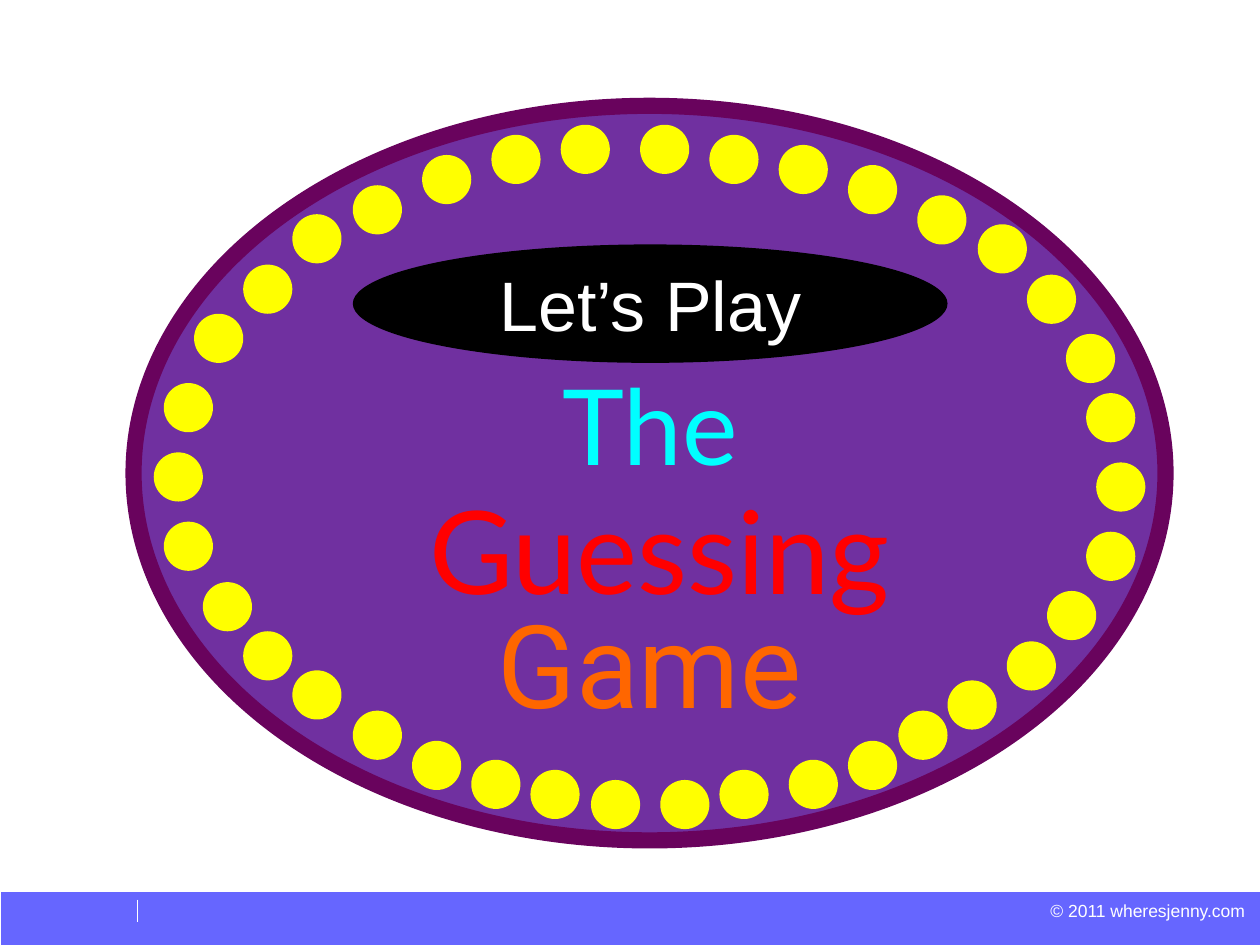
from typing import NamedTuple

from pptx import Presentation
from pptx.dml.color import RGBColor
from pptx.enum.shapes import MSO_CONNECTOR, MSO_SHAPE
from pptx.enum.text import MSO_ANCHOR, MSO_AUTO_SIZE, PP_ALIGN
from pptx.oxml.ns import qn
from pptx.util import Emu, Pt
from lxml import etree

EMU_PER_PX = 9144  # 100 px to the inch
OVAL, RECT = MSO_SHAPE.OVAL, MSO_SHAPE.RECTANGLE
STRAIGHT = MSO_CONNECTOR.STRAIGHT
MIDDLE, TOP = MSO_ANCHOR.MIDDLE, MSO_ANCHOR.TOP
CENTER, RIGHT = PP_ALIGN.CENTER, PP_ALIGN.RIGHT
NO_AUTOFIT = MSO_AUTO_SIZE.NONE

WHITE = "FFFFFF"
BULB_SIZE = 39
BLANK_LAYOUT = 6


class Box(NamedTuple):
    left: int
    top: int
    width: int
    height: int


class Title(NamedTuple):
    words: str
    box: Box
    size: int
    font: str
    color: str
    wrap: bool


# Left and top of each bulb, clockwise from the top centre
BULBS = [
    (508, 99), (563, 107), (618, 115), (673, 131), (728, 155), (776, 178),
    (815, 218), (846, 265), (862, 312), (870, 367), (862, 422), (831, 469),
    (799, 509), (752, 540), (713, 564), (673, 588), (626, 603), (571, 611),
    (524, 619), (469, 619), (421, 611), (374, 603), (327, 588), (280, 564),
    (232, 532), (193, 501), (161, 462), (130, 414), (122, 359), (130, 304),
    (154, 249), (193, 210), (232, 170), (280, 147), (335, 123), (390, 107),
    (445, 99),
]

TITLES = [
    Title("The", Box(272, 281, 488, 111), 60, "Lato", "00FFFF", True),
    Title("Game", Box(364, 466, 303, 121), 66, "Roboto", "FF6600", False),
    Title("Guessing", Box(276, 375, 495, 121), 66, "Lato", "FF0000", False),
]


def px(length: int) -> Emu:
    return Emu(length * EMU_PER_PX)


def rgb(color: str) -> RGBColor:
    return RGBColor.from_string(color)


def draw_shape(shapes, kind, box: Box, fill: str, line: str = "", line_width: float = 0):
    shape = shapes.add_shape(kind, *map(px, box))
    shape.shadow.inherit = False
    shape.fill.solid()
    shape.fill.fore_color.rgb = rgb(fill)
    if line:
        shape.line.color.rgb = rgb(line)
        shape.line.width = Pt(line_width)
    else:
        shape.line.fill.background()
    return shape


def write(shape, words: str, *, size: int, font: str, color: str,
          align=CENTER, anchor=TOP, wrap: bool = True) -> None:
    frame = shape.text_frame
    frame.word_wrap = wrap
    frame.auto_size = NO_AUTOFIT
    frame.vertical_anchor = anchor
    paragraph = frame.paragraphs[0]
    paragraph.alignment = align
    run = paragraph.add_run()
    run.text = words
    run.font.size = Pt(size)
    run.font.name = font
    run.font.color.rgb = rgb(color)


def draw_footer(shapes) -> None:
    draw_shape(shapes, RECT, Box(1, 708, 999, 42), "6666FF")

    notice = shapes.add_textbox(*map(px, Box(832, 714, 156, 17)))
    frame = notice.text_frame
    frame.margin_left = frame.margin_right = 0
    frame.margin_top = frame.margin_bottom = 0
    write(notice, "© 2011 wheresjenny.com", size=10, font="Arial",
          color=WHITE, align=RIGHT, wrap=False)

    divider = shapes.add_connector(STRAIGHT, px(109), px(714), px(109), px(732))
    divider.line.color.rgb = rgb(WHITE)
    divider.line.width = Pt(0.75)
    etree.SubElement(divider._element.spPr, qn("a:effectLst"))


def draw_sign(shapes) -> None:
    draw_shape(shapes, OVAL, Box(106, 84, 819, 583), "7030A0", "69035D", 9.25)
    for left, top in BULBS:
        draw_shape(shapes, OVAL, Box(left, top, BULB_SIZE, BULB_SIZE), "FFFF00")

    banner = draw_shape(shapes, OVAL, Box(280, 194, 472, 94), "000000")
    write(banner, "Let’s Play", size=40, font="Arial", color=WHITE, anchor=MIDDLE)

    for title in TITLES:
        write(shapes.add_textbox(*map(px, title.box)), title.words, size=title.size,
              font=title.font, color=title.color, wrap=title.wrap)


def main() -> None:
    deck = Presentation()
    deck.slide_width, deck.slide_height = px(1000), px(750)
    slide = deck.slides.add_slide(deck.slide_layouts[BLANK_LAYOUT])
    draw_footer(slide.shapes)
    draw_sign(slide.shapes.add_group_shape().shapes)
    deck.save("out.pptx")


if __name__ == "__main__":
    main()
